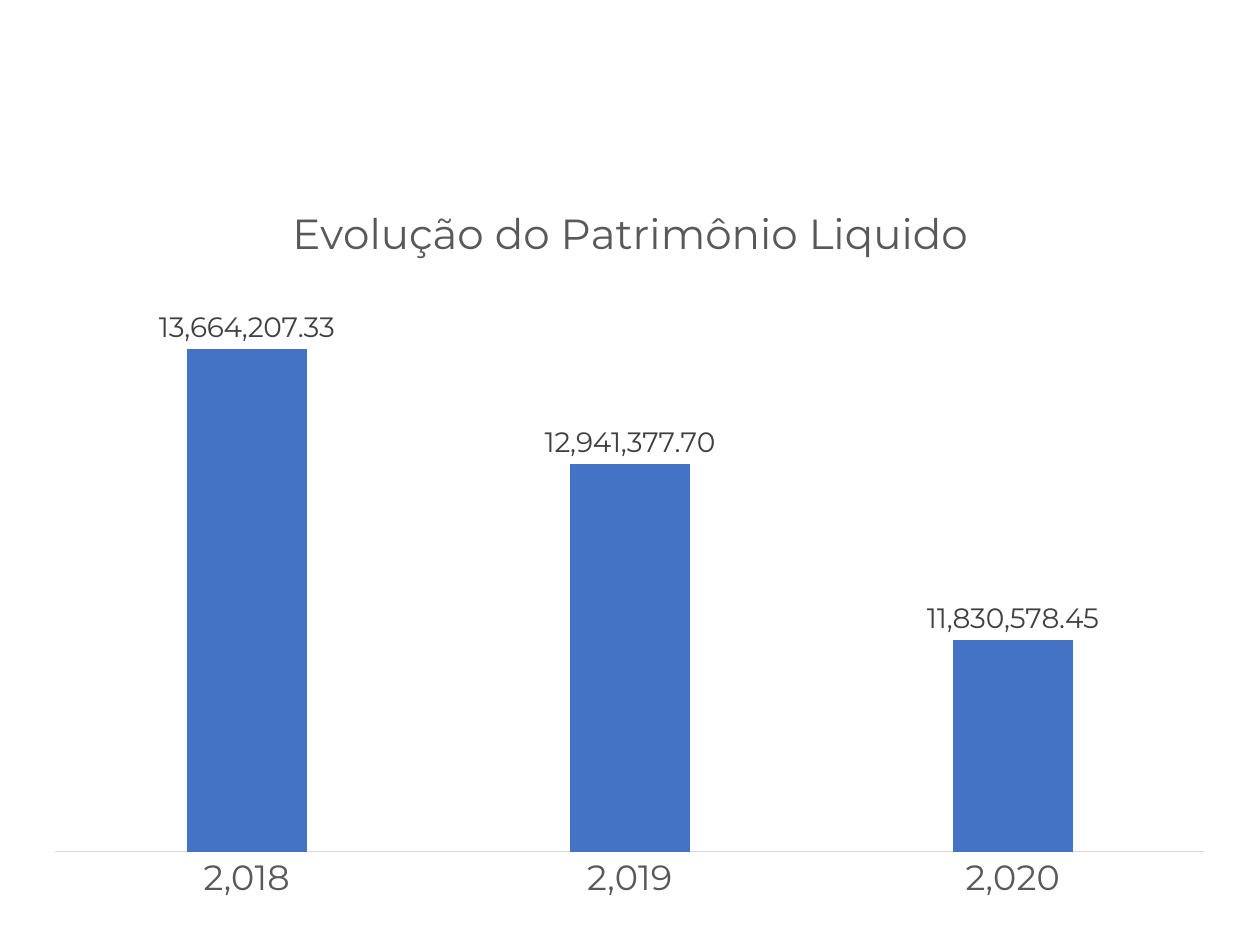
import pptx
import pptx.chart.data
import pptx.dml.color
import pptx.enum.chart
import pptx.oxml
import pptx.oxml.ns
import pptx.util

Inches = pptx.util.Inches
Pt = pptx.util.Pt
RGBColor = pptx.dml.color.RGBColor

BLUE = RGBColor(0x44, 0x72, 0xC4)
GREY = RGBColor(0x59, 0x59, 0x59)
DARK_GREY = RGBColor(0x40, 0x40, 0x40)
LIGHT_GREY = RGBColor(0xD9, 0xD9, 0xD9)
BLACK = RGBColor(0, 0, 0)

NUMBER_FORMAT = "#,##0.00"
EQUITY_BY_YEAR = {
    "2,018": 13664207.33,
    "2,019": 12941377.70,
    "2,020": 11830578.45,
}
PLOT_LAYOUT = {"x": 0.044, "y": 0.158, "w": 0.912, "h": 0.721}


def apply_format(target, values):
    for name, value in values.items():
        setattr(target, name, value)


def style_font(font, size, color, name="Montserrat"):
    apply_format(font, {"size": Pt(size), "name": name, "bold": False})
    font.color.rgb = color


def add_equity_chart(slide):
    equity = pptx.chart.data.CategoryChartData(number_format=NUMBER_FORMAT)
    equity.categories = list(EQUITY_BY_YEAR)
    equity.add_series("Series 1", list(EQUITY_BY_YEAR.values()))
    frame = slide.shapes.add_chart(
        pptx.enum.chart.XL_CHART_TYPE.COLUMN_CLUSTERED,
        Inches(0), Inches(1.38), Inches(10), Inches(6.12), equity,
    )
    chart = frame.chart
    chart.has_legend = False
    style_font(chart.font, 10, BLACK, "Calibri")
    return chart


def add_title(chart, wording):
    chart.has_title = True
    chart.chart_title.include_in_layout = False
    heading = chart.chart_title.text_frame
    heading.text = wording
    style_font(heading.paragraphs[0].runs[0].font, 24, GREY)


def style_axes(chart):
    no_tick = pptx.enum.chart.XL_TICK_MARK.NONE
    years = chart.category_axis
    apply_format(years, {
        "major_tick_mark": no_tick,
        "minor_tick_mark": no_tick,
        "has_major_gridlines": False,
    })
    style_font(years.tick_labels.font, 20, GREY)
    years.format.line.color.rgb = LIGHT_GREY
    years.format.line.width = Pt(0.75)
    apply_format(chart.value_axis, {
        "visible": False,
        "has_major_gridlines": False,
        "minimum_scale": 10500000,
        "maximum_scale": 14000000,
    })


def style_columns(chart):
    columns = chart.plots[0]
    apply_format(columns, {
        "gap_width": 219,
        "overlap": -27,
        "vary_by_categories": False,
    })
    fill = columns.series[0].format.fill
    fill.solid()
    fill.fore_color.rgb = BLUE
    amounts = columns.series[0].data_labels
    apply_format(amounts, {
        "show_value": True,
        "position": pptx.enum.chart.XL_LABEL_POSITION.OUTSIDE_END,
        "number_format": NUMBER_FORMAT,
        "number_format_is_linked": False,
    })
    style_font(amounts.font, 16, DARK_GREY)


def place_plot(chart):
    plot_area = chart.plots[0]._element.getparent()
    for automatic in plot_area.findall(pptx.oxml.ns.qn("c:layout")):
        plot_area.remove(automatic)
    settings = {"layoutTarget": "inner", "xMode": "edge", "yMode": "edge", **PLOT_LAYOUT}
    entries = "".join(f'<c:{tag} val="{value}"/>' for tag, value in settings.items())
    plot_area.insert(0, pptx.oxml.parse_xml(
        f'<c:layout {pptx.oxml.ns.nsdecls("c")}>'
        f"<c:manualLayout>{entries}</c:manualLayout></c:layout>"
    ))


def main():
    deck = pptx.Presentation()
    apply_format(deck, {"slide_width": Inches(10), "slide_height": Inches(7.5)})
    slide = deck.slides.add_slide(deck.slide_layouts[6])
    chart = add_equity_chart(slide)
    add_title(chart, "Evolução do Patrimônio Liquido")
    style_axes(chart)
    style_columns(chart)
    place_plot(chart)
    deck.save("out.pptx")


if __name__ == "__main__":
    main()
